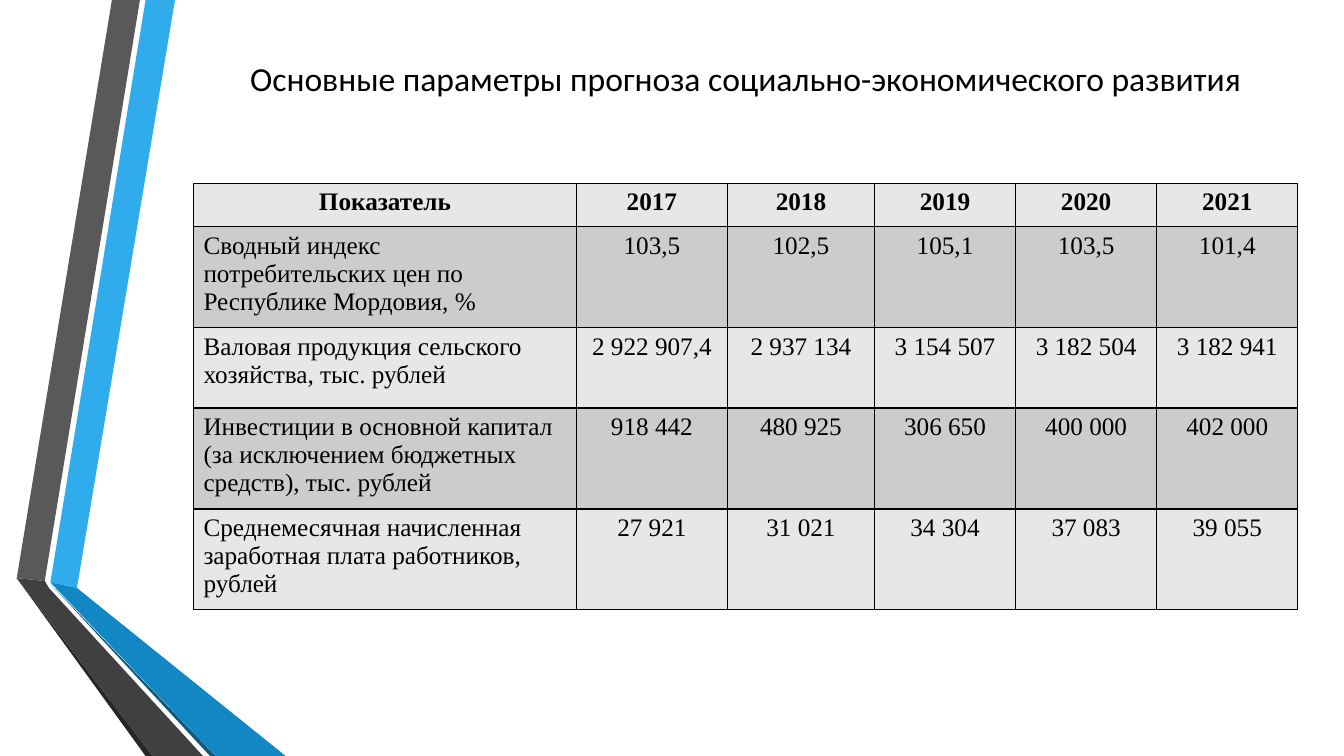
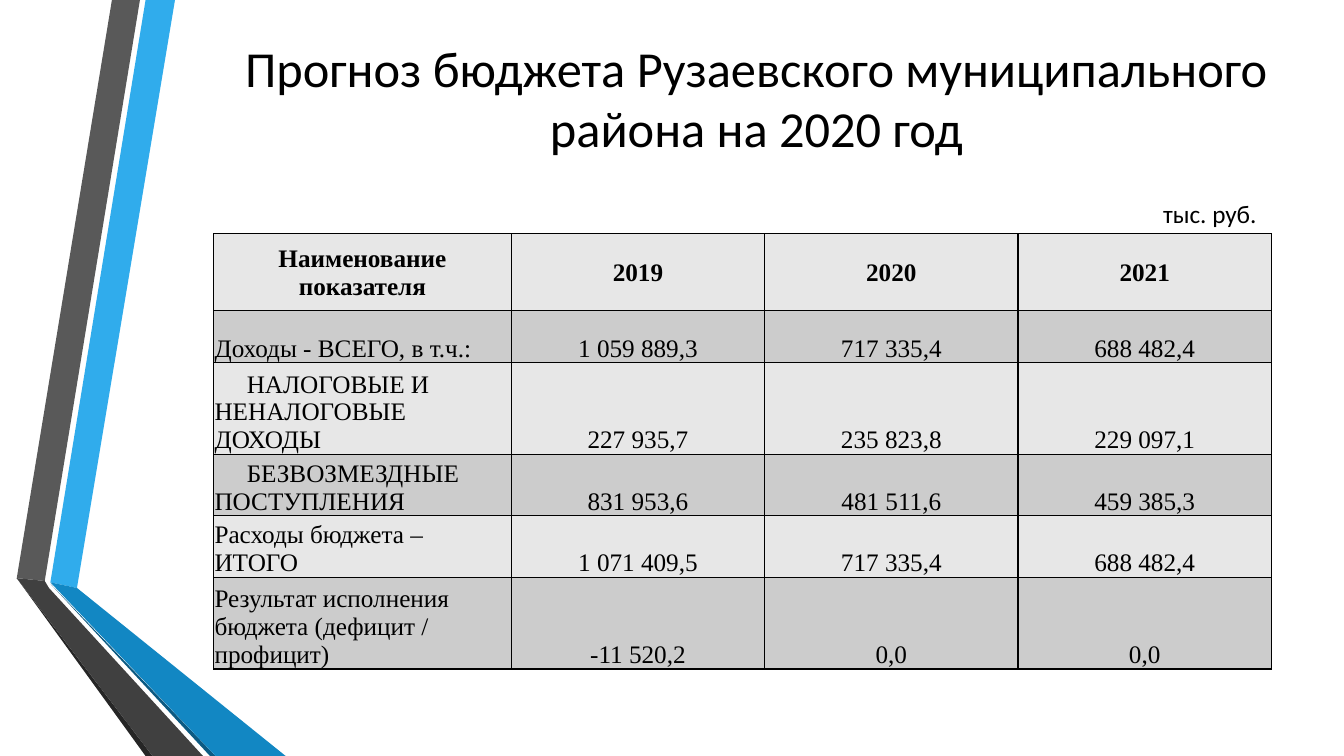
from lxml import etree
from pptx import Presentation
from pptx.dml.color import RGBColor
from pptx.enum import text
from pptx.oxml import ns
from pptx.util import Pt

BLACK = "000000"
ROW_FILLS = ["E7E7E7", "CCCCCC"]
TITLE_FONT, TABLE_FONT = "Calibri", "Times New Roman"
TEXT_SIZE = 18
LEFT, CENTER = text.PP_ALIGN.LEFT, text.PP_ALIGN.CENTER
TOP, MIDDLE, BOTTOM = text.MSO_ANCHOR.TOP, text.MSO_ANCHOR.MIDDLE, text.MSO_ANCHOR.BOTTOM

RIBBONS = [
    ("30ACEC", [(36, 416.2), (55.4, 419.8), (124.6, 0), (104.4, 0)]),
    ("595959", [(100.1, 0), (79.9, 0), (11.5, 412.6), (31.7, 415.4)]),
    ("262626", [(11.5, 412.6), (104.4, 540), (108.7, 540)]),
    ("0C5A82", [(36, 416.9), (149.8, 540), (154.1, 540)]),
    ("1287C3", [(36, 416.5), (154.1, 540), (203.8, 540), (55.4, 419.8)]),
    ("404040", [(145.4, 540), (34.6, 419.8), (31.7, 415.4), (11.5, 412.6), (108.7, 540)]),
]

SLIDES = [
    {
        "title": "Основные параметры прогноза социально-экономического развития",
        "title_box": (138.2, 19.4, 789, 72.7),
        "title_size": 24,
        "table_at": (138.2, 131),
        "columns": [273.6, 107.8, 105.1, 100.8, 100.8, 100.8],
        "row_heights": [31, 67, 57.5, 67, 67],
        "anchors": (TOP, TOP),
        "insets": (7.2, 3.6, 7.2, 3.6),
        "rows": [
            ["Показатель", "2017", "2018", "2019", "2020", "2021"],
            ["Сводный индекс потребительских цен по Республике Мордовия, %",
             "103,5", "102,5", "105,1", "103,5", "101,4"],
            ["Валовая продукция сельского хозяйства, тыс. рублей",
             "2 922 907,4", "2 937 134", "3 154 507", "3 182 504", "3 182 941"],
            ["Инвестиции в основной капитал (за исключением бюджетных средств), тыс. рублей",
             "918 442", "480 925", "306 650", "400 000", "402 000"],
            ["Среднемесячная начисленная заработная плата работников, рублей",
             "27 921", "31 021", "34 304", "37 083", "39 055"],
        ],
    },
    {
        "title": "Прогноз бюджета Рузаевского муниципального района на 2020 год",
        "title_box": (129.6, 21.6, 821.5, 95.8),
        "title_size": 36,
        "unit": "тыс. руб.",
        "unit_box": (823.7, 138.2, 83.5, 28.8),
        "table_at": (152.6, 167),
        "columns": [212.6, 181, 181, 181],
        "row_heights": [55, 37, 61, 40.5, 40.5, 60.5],
        "anchors": (MIDDLE, BOTTOM),
        "insets": (0.7, 0.7, 0.7, 0),
        "indented_rows": (2, 3),
        "rows": [
            ["Наименование\vпоказателя", "2019", "2020", "2021"],
            ["Доходы - ВСЕГО, в т.ч.:", "1 059 889,3", "717 335,4", "688 482,4"],
            ["НАЛОГОВЫЕ И НЕНАЛОГОВЫЕ ДОХОДЫ", "227 935,7", "235 823,8", "229 097,1"],
            ["БЕЗВОЗМЕЗДНЫЕ ПОСТУПЛЕНИЯ", "831 953,6", "481 511,6", "459 385,3"],
            ["Расходы бюджета – ИТОГО", "1 071 409,5", "717 335,4", "688 482,4"],
            ["Результат исполнения бюджета (дефицит / профицит)", "-11 520,2", "0,0", "0,0"],
        ],
    },
]


def color(value):
    return RGBColor.from_string(value)


def paint(target, value):
    target.fill.solid()
    target.fill.fore_color.rgb = color(value)


def write(frame, words, size, font, align, bold=False):
    frame.text = words
    paragraph = frame.paragraphs[0]
    paragraph.alignment = align
    paragraph.font.size = Pt(size)
    paragraph.font.name = font
    paragraph.font.bold = bold
    paragraph.font.color.rgb = color(BLACK)
    return paragraph


def add_text(slide, box, words, size, align, wrap):
    frame = slide.shapes.add_textbox(*map(Pt, box)).text_frame
    frame.word_wrap = wrap
    frame.vertical_anchor = MIDDLE
    write(frame, words, size, TITLE_FONT, align)


def add_ribbons(slide):
    for fill, points in RIBBONS:
        builder = slide.shapes.build_freeform(*points[0], scale=Pt(1))
        builder.add_line_segments(points[1:], close=True)
        ribbon = builder.convert_to_shape()
        paint(ribbon, fill)
        ribbon.line.fill.background()
        ribbon.shadow.inherit = False


def add_borders(cell):
    properties = cell._tc.get_or_add_tcPr()
    for side in ("a:lnL", "a:lnR", "a:lnT", "a:lnB"):
        line = etree.SubElement(properties, ns.qn(side), w=str(Pt(1)))
        solid = etree.SubElement(line, ns.qn("a:solidFill"))
        etree.SubElement(solid, ns.qn("a:srgbClr"), val=BLACK)


def add_table(slide, content):
    rows, columns, heights = content["rows"], content["columns"], content["row_heights"]
    table = slide.shapes.add_table(
        len(rows), len(columns), *map(Pt, content["table_at"]),
        Pt(sum(columns)), Pt(sum(heights))).table
    table.horz_banding = False
    for column, width in zip(table.columns, columns):
        column.width = Pt(width)
    for r, values in enumerate(rows):
        table.rows[r].height = Pt(heights[r])
        header = r == 0
        for c, value in enumerate(values):
            cell = table.cell(r, c)
            add_borders(cell)
            paint(cell, ROW_FILLS[r % 2])
            cell.vertical_anchor = content["anchors"][0 if header else 1]
            (cell.margin_left, cell.margin_top,
             cell.margin_right, cell.margin_bottom) = map(Pt, content["insets"])
            align = CENTER if header or c else LEFT
            paragraph = write(cell.text_frame, value, TEXT_SIZE, TABLE_FONT, align, header)
            if c == 0 and r in content.get("indented_rows", ()):
                paragraph._p.get_or_add_pPr().set("indent", str(Pt(23)))


def main():
    deck = Presentation()
    deck.slide_width, deck.slide_height = Pt(960), Pt(540)
    for content in SLIDES:
        slide = deck.slides.add_slide(deck.slide_layouts[6])
        add_ribbons(slide)
        add_text(slide, content["title_box"], content["title"],
                 content["title_size"], CENTER, True)
        add_table(slide, content)
        if "unit" in content:
            add_text(slide, content["unit_box"], content["unit"], TEXT_SIZE, LEFT, False)
    deck.save("out.pptx")


if __name__ == "__main__":
    main()
